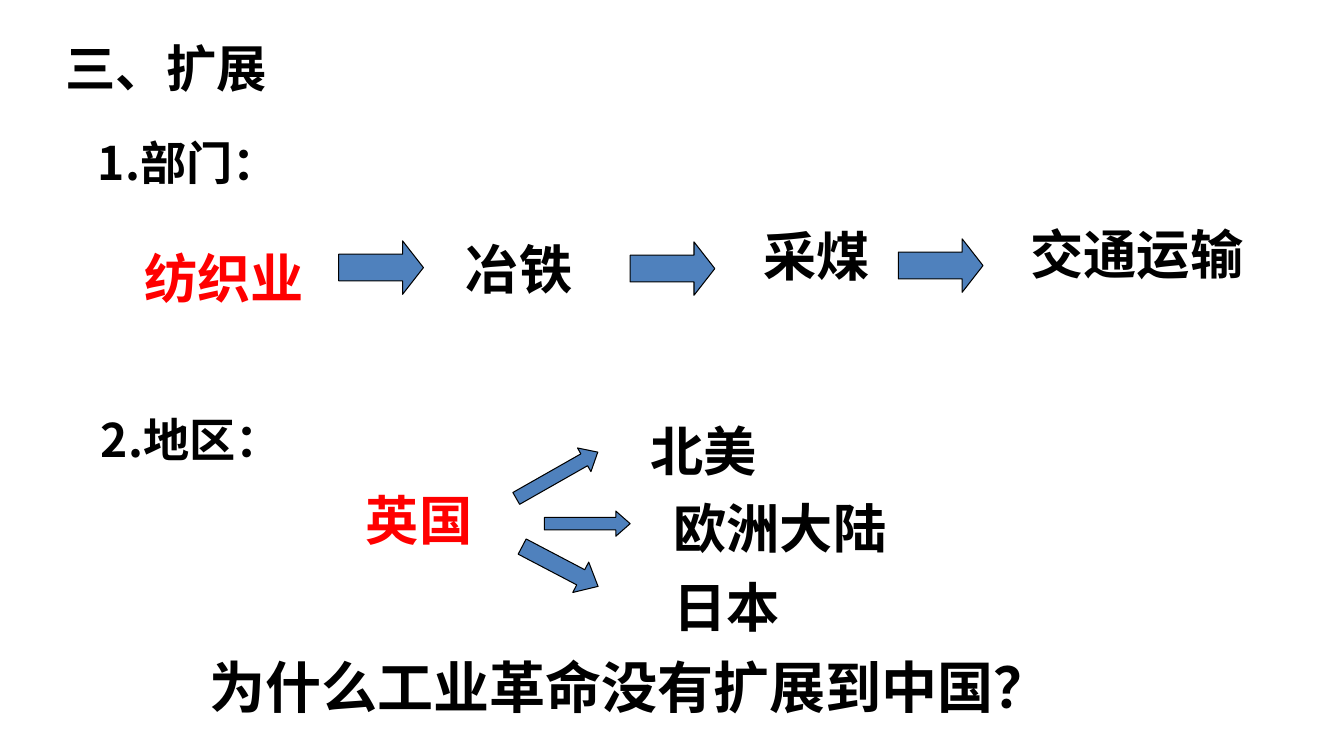
from lxml.etree import SubElement
from pptx import Presentation
from pptx.dml.color import RGBColor
from pptx.enum.shapes import MSO_SHAPE as SHAPE
from pptx.enum.text import MSO_AUTO_SIZE as AUTO_SIZE
from pptx.oxml.ns import qn
from pptx.util import Inches, Pt

CJK = "Noto Sans CJK SC"
BLACK, RED, BLUE = "000000", "FF0000", "4F81BD"


def color(value):
    """Return the colour of a hex string."""
    return RGBColor.from_string(value)


def add_text(s, text, x, y, w, h, size=38, fill=BLACK, font="Arial", wrap=False, inset=0.12):
    """Add a bold one-line text box."""
    tf = s.shapes.add_textbox(Inches(x), Inches(y), Inches(w), Inches(h)).text_frame
    tf.word_wrap = wrap
    tf.auto_size = AUTO_SIZE.SHAPE_TO_FIT_TEXT
    tf.margin_left = tf.margin_right = Inches(inset)
    tf.margin_top = tf.margin_bottom = Inches(inset / 2)
    p = tf.paragraphs[0]
    p.text = text
    p.font.name = font
    p.font.size = Pt(size)
    p.font.bold = True
    p.font.color.rgb = color(fill)
    props = p._p.get_or_add_pPr().get_or_add_defRPr()
    SubElement(props, qn("a:ea")).set("typeface", CJK)


def add_arrow(s, x, y, w, h, head, angle=0):
    """Add a blue block arrow."""
    sp = s.shapes.add_shape(SHAPE.RIGHT_ARROW, Inches(x), Inches(y), Inches(w), Inches(h))
    sp.adjustments[0] = 0.5
    sp.adjustments[1] = head
    sp.rotation = angle
    sp.shadow.inherit = False
    sp.fill.solid()
    sp.fill.fore_color.rgb = color(BLUE)
    sp.line.color.rgb = color(BLACK)
    sp.line.width = Pt(0.75)


def add_sectors(s):
    """Add the chain of industries."""
    add_text(s, "1.部门：", 0.85, 1.27, 3.78, 0.69, 33, font=CJK, wrap=True)
    add_text(s, "纺织业", 1.31, 2.37, 1.83, 0.76, fill=RED)
    add_text(s, "冶铁", 4.5, 2.28, 2.1, 0.76, wrap=True)
    add_text(s, "采煤", 7.45, 2.16, 1.3, 0.76)
    add_text(s, "交通运输", 10.1, 2.14, 2.36, 0.76)
    for x, y in ((3.36, 2.39), (6.25, 2.4), (8.91, 2.37)):
        add_arrow(s, x, y, 0.84, 0.53, 0.39)


def add_regions(s):
    """Add the spread from one country to three regions."""
    add_text(s, "2.地区：", 0.88, 4.02, 3.67, 0.69, 33, font=CJK, wrap=True)
    add_text(s, "英国", 3.51, 4.77, 1.78, 0.76, fill=RED, wrap=True)
    regions = (("北美", 6.33, 4.09, 1.3), ("欧洲大陆", 6.56, 4.85, 2.36), ("日本", 6.56, 5.64, 1.3))
    for name, x, y, w in regions:
        add_text(s, name, x, y, w, 0.76)
    arrows = ((5.06, 4.58, 0.93, 0.27, 330.4), (5.4, 5.07, 0.85, 0.25, 0), (5.13, 5.45, 0.85, 0.34, 27.7))
    for x, y, w, h, angle in arrows:
        add_arrow(s, x, y, w, h, 0.57, angle)


def main():
    """Build and save the slide."""
    prs = Presentation()
    prs.slide_width, prs.slide_height = Inches(13.33), Inches(7.5)
    s = prs.slides.add_slide(prs.slide_layouts[6])
    add_text(s, "三、扩展", 0.55, 0.32, 4.85, 0.71, 36, font=CJK, wrap=True, inset=0.1)
    add_sectors(s)
    add_regions(s)
    add_text(s, "为什么工业革命没有扩展到中国？", 1.96, 6.41, 10.5, 0.79, 40, wrap=True)
    prs.save("out.pptx")


if __name__ == "__main__":
    main()
